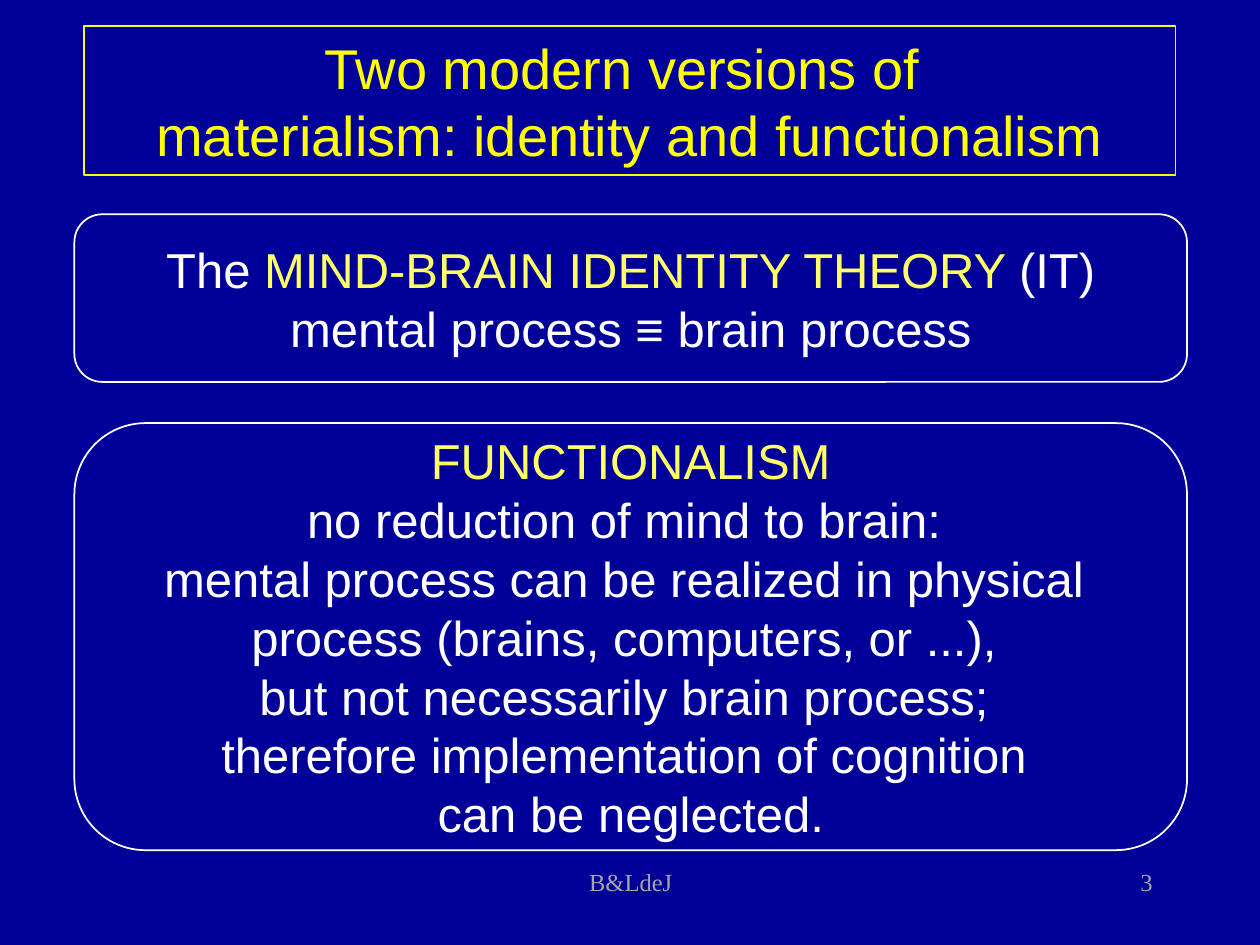
from pptx import Presentation
from pptx.dml.color import RGBColor
from pptx.enum.shapes import MSO_SHAPE as Preset
from pptx.enum.text import MSO_ANCHOR as Anchor, MSO_AUTO_SIZE as AutoSize, PP_ALIGN as Align
from pptx.util import Cm, Pt

NAVY, WHITE, YELLOW, PALE_YELLOW, GREY = "000099", "FFFFFF", "FFFF00", "FFFF66", "A6A6A6"


def color(hex_code):
    return RGBColor.from_string(hex_code)


def apply(target, values):
    for attribute, value in values.items():
        setattr(target, attribute, value)


class LectureSlide:
    heading_font = {"name": "Arial", "size": Pt(32)}
    theory_font = {"name": "Arial", "size": Pt(28)}
    footer_font = {"name": "Times New Roman", "size": Pt(14)}

    def __init__(self, deck):
        self.slide = deck.slides.add_slide(deck.slide_layouts[5])
        background = self.slide.background.fill
        background.solid()
        background.fore_color.rgb = color(NAVY)

    def place(self, shape, bounds):
        apply(shape, dict(zip(("left", "top", "width", "height"), map(Cm, bounds))))

    def outline(self, shape, line_color):
        shape.fill.background()
        shape.line.color.rgb = color(line_color)
        shape.line.width = Pt(1)

    def add_lines(self, frame, lines, font, align, **layout):
        apply(frame, {"auto_size": AutoSize.NONE, **layout})
        for number, pieces in enumerate(lines):
            paragraph = frame.add_paragraph() if number else frame.paragraphs[0]
            paragraph.alignment = align
            for words, text_color in pieces:
                run = paragraph.add_run()
                run.text = words
                apply(run.font, font)
                run.font.color.rgb = color(text_color)

    def title(self, lines, bounds):
        heading = self.slide.shapes.title
        self.place(heading, bounds)
        self.outline(heading, YELLOW)
        self.add_lines(heading.text_frame, lines, self.heading_font, Align.CENTER,
                       word_wrap=True, vertical_anchor=Anchor.MIDDLE)

    def theory(self, lines, top, height):
        panel = self.slide.shapes.add_shape(
            Preset.ROUNDED_RECTANGLE, Cm(1.5), Cm(top), Cm(22.43), Cm(height))
        panel.shadow.inherit = False
        self.outline(panel, WHITE)
        self.add_lines(panel.text_frame, lines, self.theory_font, Align.CENTER,
                       word_wrap=False, vertical_anchor=Anchor.MIDDLE)

    def footer(self, words, left, width, align):
        note = self.slide.shapes.add_textbox(Cm(left), Cm(17.35), Cm(width), Cm(1.27))
        self.add_lines(note.text_frame, [[(words, GREY)]], self.footer_font, align,
                       word_wrap=True)


def main():
    deck = Presentation()
    apply(deck, {"slide_width": Cm(25.4), "slide_height": Cm(19.05)})
    lecture = LectureSlide(deck)

    heading = ["Two modern versions of ", "materialism: identity and functionalism"]
    lecture.title([[(line, YELLOW)] for line in heading], (1.7, 0.53, 22, 3))

    identity = [
        [("The ", WHITE), ("MIND-BRAIN IDENTITY THEORY ", PALE_YELLOW), ("(IT)", WHITE)],
        [("mental process ≡ brain process", WHITE)],
    ]
    lecture.theory(identity, 4.32, 3.38)

    claims = [
        "no reduction of mind to brain: ",
        "mental process can be realized in physical ",
        "process (brains, computers, or ...), ",
        "but not necessarily brain process; ",
        "therefore implementation of cognition ",
        "can be neglected.",
    ]
    functionalism = [[("FUNCTIONALISM", PALE_YELLOW)]] + [[(claim, WHITE)] for claim in claims]
    lecture.theory(functionalism, 8.53, 8.61)

    lecture.footer("B&LdeJ", 8.69, 8.05, Align.CENTER)
    lecture.footer("3", 18.21, 5.28, Align.RIGHT)
    deck.save("out.pptx")


if __name__ == "__main__":
    main()
